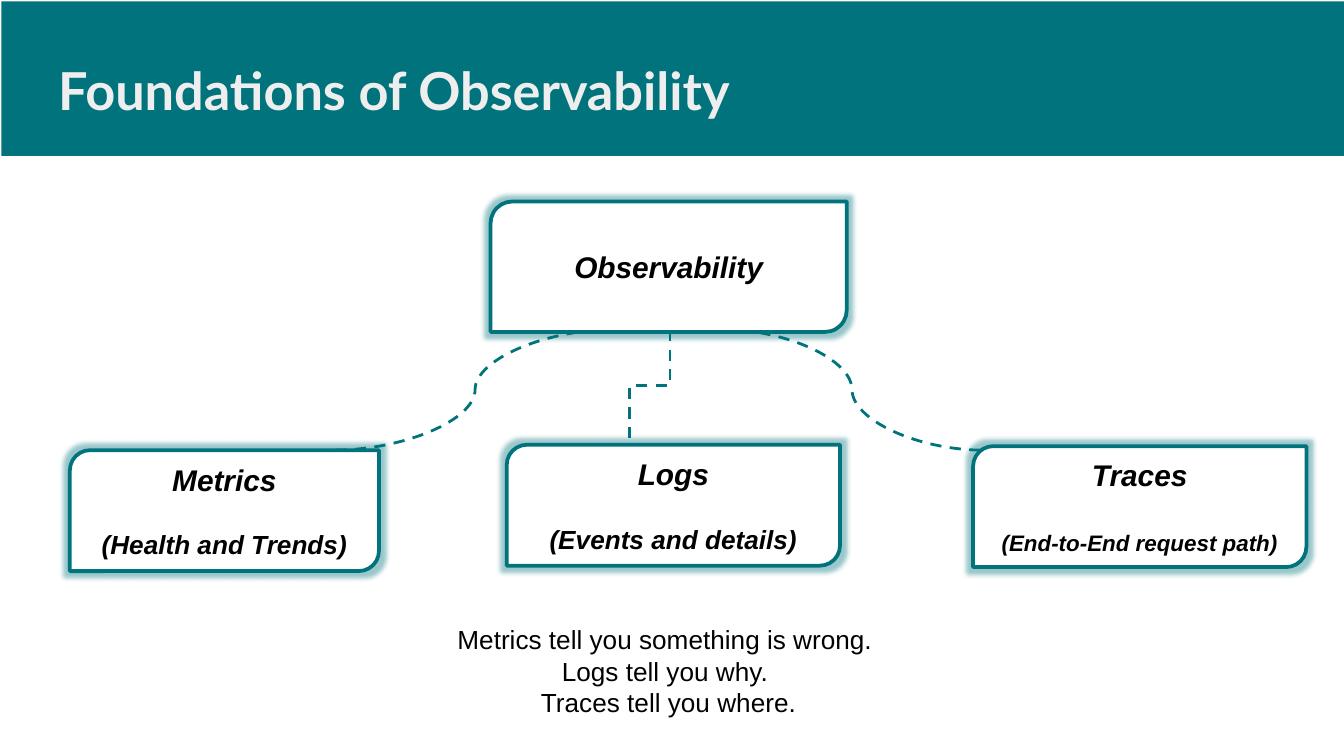
from dataclasses import dataclass

from lxml import etree
from pptx import Presentation
from pptx import util as u
from pptx.dml.color import RGBColor
from pptx.enum import dml, shapes, text
from pptx.oxml.ns import qn


@dataclass(frozen=True)
class Theme:
    teal: str = "00737C"
    white: str = "FFFFFF"
    title_ink: str = "EEEEEE"
    ink: str = "000000"
    title_font: str = "Lato"
    body_font: str = "Arial"
    title_size: int = 28
    head_size: int = 16
    body_size: int = 14
    small_size: int = 12


class Deck:
    def __init__(self, prs, theme):
        self.t = theme
        self.s = prs.slides.add_slide(prs.slide_layouts[5])

    def run(self, p, words, size, font=None, color=None, bold=False, italic=False):
        p.alignment = text.PP_ALIGN.CENTER
        r = p.add_run()
        r.text = words
        f = r.font
        f.size, f.bold, f.italic = u.Pt(size), bold, italic
        f.name = font or self.t.body_font
        f.color.rgb = RGBColor.from_string(color or self.t.ink)

    def shape(self, kind, box, fill):
        sp = self.s.shapes.add_shape(kind, *map(u.Inches, box))
        sp.shadow.inherit = False
        sp.fill.solid()
        sp.fill.fore_color.rgb = RGBColor.from_string(fill)
        sp.line.fill.background()
        return sp

    def title(self, words, box, band):
        sp = self.shape(shapes.MSO_SHAPE.RECTANGLE, band, self.t.teal)
        self.s.shapes._spTree.insert(2, sp._element)  # behind the title
        title = self.s.shapes.title
        title.left, title.top, title.width, title.height = map(u.Inches, box)
        tf = title.text_frame
        tf.margin_left = tf.margin_right = tf.margin_top = tf.margin_bottom = 0
        tf.auto_size = text.MSO_AUTO_SIZE.NONE
        tf.vertical_anchor = text.MSO_ANCHOR.BOTTOM
        self.run(tf.paragraphs[0], words, self.t.title_size,
                 self.t.title_font, self.t.title_ink, bold=True)

    def card(self, box, head, detail=None, size=None, gap=0):
        sp = self.shape(shapes.MSO_SHAPE.ROUND_2_DIAG_RECTANGLE, box, self.t.white)
        sp.line.color.rgb = RGBColor.from_string(self.t.teal)
        sp.line.width = u.Pt(2)
        # Soft teal glow
        effects = sp._element.spPr.find(qn("a:effectLst"))
        glow = etree.SubElement(effects, qn("a:glow"), rad=str(u.Pt(5)))
        clr = etree.SubElement(glow, qn("a:srgbClr"), val=self.t.teal)
        etree.SubElement(clr, qn("a:alpha"), val="40000")
        tf = sp.text_frame
        tf.word_wrap = True
        tf.vertical_anchor = text.MSO_ANCHOR.MIDDLE
        self.run(tf.paragraphs[0], head, self.t.head_size, bold=True, italic=True)
        if detail:
            p = tf.add_paragraph()
            p.space_before = u.Pt(gap)
            self.run(p, detail, size, bold=True, italic=True)

    def link(self, kind, start, end, rotation=0):
        c = self.s.shapes.add_connector(kind, *map(u.Inches, start + end))
        c.line.color.rgb = RGBColor.from_string(self.t.teal)
        c.line.width = u.Pt(1.5)
        c.line.dash_style = dml.MSO_LINE.DASH
        spPr = c._element.spPr
        etree.SubElement(spPr, qn("a:effectLst"))
        if rotation:
            spPr.find(qn("a:xfrm")).set("rot", str(rotation * 60000))

    def note(self, box, paragraphs):
        tf = self.s.shapes.add_textbox(*map(u.Inches, box)).text_frame
        tf.word_wrap = True
        for i, lines in enumerate(paragraphs):
            p = tf.add_paragraph() if i else tf.paragraphs[0]
            for j, line in enumerate(lines):
                if j:
                    p.add_line_break()
                self.run(p, line, self.t.body_size)


def main():
    prs = Presentation()
    prs.slide_width = u.Inches(10)
    prs.slide_height = prs.slide_width * 9 // 16
    t = Theme()
    d = Deck(prs, t)

    # Title band
    d.title("Foundations of Observability", (-0.87, -0.25, 7.6, 1.15),
            band=(0.01, 0.01, 9.99, 1.15))

    # Three pillars
    d.card((0.52, 3.35, 2.3, 0.9), "Metrics", "(Health and Trends)", t.body_size, 17)
    d.card((3.77, 3.31, 2.48, 0.9), "Logs", "(Events and details)", t.body_size, 17)
    d.card((7.24, 3.32, 2.48, 0.9), "Traces", "(End-to-End request path)",
           t.small_size, 19.5)

    # Dashed links; the elbow is turned to leave downwards
    kinds = shapes.MSO_CONNECTOR
    d.link(kinds.CURVE, (4.59, 2.45), (2.48, 3.35))
    d.link(kinds.CURVE, (5.36, 2.45), (7.32, 3.35))
    d.link(kinds.ELBOW, (4.42, 2.72), (5.25, 3.02), rotation=90)

    # Root concept
    d.card((3.65, 1.5, 2.65, 0.97), "Observability")

    # Takeaway
    d.note((0.77, 4.59, 8.41, 0.81), [["Metrics tell you something is wrong. "],
                                      ["Logs tell you why. ", "Traces tell you where."]])
    prs.save("out.pptx")


if __name__ == "__main__":
    main()
